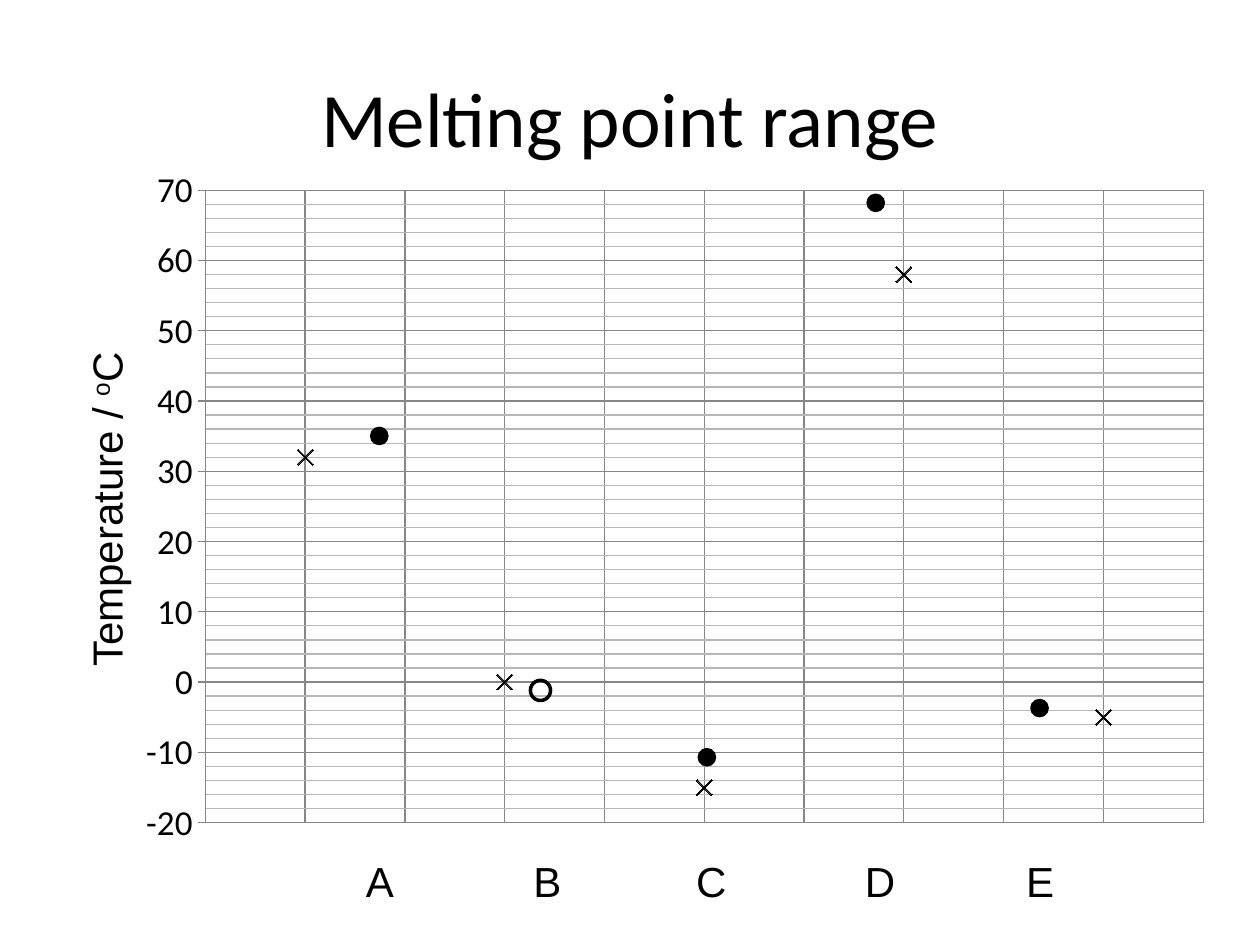
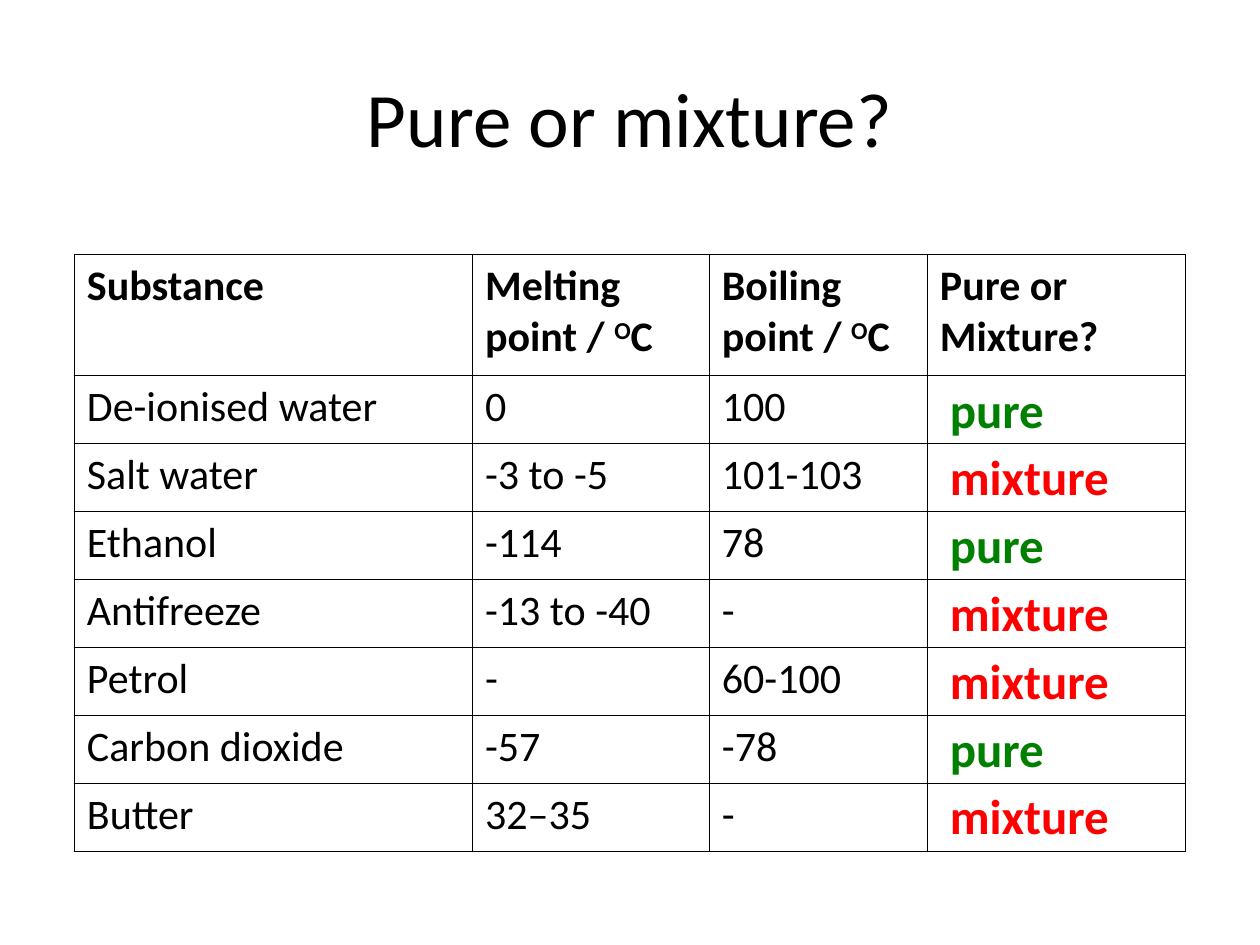
from lxml import etree
from pptx import Presentation
from pptx.chart.data import XyChartData
from pptx.dml.color import RGBColor
from pptx.enum.chart import XL_CHART_TYPE, XL_MARKER_STYLE, XL_TICK_LABEL_POSITION, XL_TICK_MARK
from pptx.enum.shapes import MSO_SHAPE
from pptx.enum.text import MSO_ANCHOR, PP_ALIGN
from pptx.oxml import parse_xml
from pptx.oxml.ns import nsdecls, qn
from pptx.util import Inches, Pt

SCATTER = XL_CHART_TYPE.XY_SCATTER
CROSS = XL_MARKER_STYLE.X
LABELS_LOW = XL_TICK_LABEL_POSITION.LOW
TICK_OUT, TICK_NONE = XL_TICK_MARK.OUTSIDE, XL_TICK_MARK.NONE
OVAL = MSO_SHAPE.OVAL
TOP, MIDDLE = MSO_ANCHOR.TOP, MSO_ANCHOR.MIDDLE
LEFT, CENTER = PP_ALIGN.LEFT, PP_ALIGN.CENTER

WIDTH, HEIGHT = Inches(10), Inches(7.5)
COLUMNS, ROWS = 100, 75
COLORS = {"ink": "000000", "major": "868686", "minor": "B7B7B7",
          "pure": "008000", "mixture": "FF0000"}

MELTING_POINTS = [32, 0, -15, 58, -5]
SUBSTANCE_LABELS = {"A": 30.15, "B": 43.45, "C": 56.45, "D": 69.85, "E": 82.55}
RANGE_DOTS = [(30.1, 34.6), (56.1, 60.1), (69.5, 16.1), (82.5, 56.2)]
HOLLOW_DOT = (42.9, 54.8)

HEADINGS = ["Substance", "Melting point / ^O^C", "Boiling point / ^O^C", "Pure or Mixture?"]
SUBSTANCES = [
    ("De-ionised water", "0", "100", "pure"),
    ("Salt water", "-3 to -5", "101-103", "mixture"),
    ("Ethanol", "-114", "78", "pure"),
    ("Antifreeze", "-13 to -40", "-", "mixture"),
    ("Petrol", "-", "60-100", "mixture"),
    ("Carbon dioxide", "-57", "-78", "pure"),
    ("Butter", "32–35", "-", "mixture"),
]


def rgb(name):
    return RGBColor.from_string(COLORS[name])


def write(frame, text, size=24, font="Calibri", color="ink", bold=False, align=LEFT):
    """Text between carets is raised."""
    paragraph = frame.paragraphs[0]
    paragraph.alignment = align
    for index, part in enumerate(text.split("^")):
        run = paragraph.add_run()
        run.text = part
        run.font.size, run.font.name, run.font.bold = Pt(size), font, bold
        run.font.color.rgb = rgb(color)
        if index % 2:
            run.font._element.set("baseline", "30000")


class Deck:
    def __init__(self):
        self.presentation = Presentation()
        self.presentation.slide_width, self.presentation.slide_height = WIDTH, HEIGHT
        self.slide = None

    def x(self, columns):
        return round(WIDTH * columns / COLUMNS)

    def y(self, rows):
        return round(HEIGHT * rows / ROWS)

    def box(self, left, top, width, height):
        return self.x(left), self.y(top), self.x(width), self.y(height)

    def new_slide(self, title):
        self.slide = self.presentation.slides.add_slide(self.presentation.slide_layouts[6])
        self.text(title, (5, 3, 90, 12.5), wrap=True, anchor=MIDDLE, size=44, align=CENTER)

    def text(self, text, area, wrap=False, anchor=TOP, rotation=0, **style):
        label = self.slide.shapes.add_textbox(*self.box(*area))
        label.rotation = rotation
        label.text_frame.word_wrap = wrap
        label.text_frame.vertical_anchor = anchor
        write(label.text_frame, text, **style)

    def dot(self, center, diameter, filled=True):
        left, top = (place - diameter / 2 for place in center)
        dot = self.slide.shapes.add_shape(OVAL, *self.box(left, top, diameter, diameter))
        dot.shadow.inherit = False
        if filled:
            dot.fill.solid()
            dot.fill.fore_color.rgb = rgb("ink")
        else:
            dot.fill.background()
        dot.line.color.rgb = rgb("ink")
        dot.line.width = Pt(2)

    def scatter(self, values, area, plot):
        data = XyChartData()
        points = data.add_series("Series 1")
        for position, value in enumerate(values, 1):
            points.add_data_point(position, value)
        chart = self.slide.shapes.add_chart(SCATTER, *self.box(*area), data).chart
        chart.has_legend = chart.has_title = False
        chart.font.name, chart.font.size = "Calibri", Pt(20)
        chart.font.color.rgb = rgb("ink")
        chart.plots[0].vary_by_categories = False

        series = chart.plots[0].series[0]
        series.smooth = False
        series.format.line.fill.background()
        series.marker.style, series.marker.size = CROSS, 9
        series.marker.format.fill.solid()
        series.marker.format.fill.fore_color.rgb = rgb("ink")
        series.marker.format.line.color.rgb = rgb("ink")

        across, up = chart.category_axis, chart.value_axis
        across.minimum_scale, across.maximum_scale, across.major_unit = 0.5, 5.5, 0.5
        up.minimum_scale, up.maximum_scale = -20, 70
        up.major_unit, up.minor_unit = 10, 2
        across.visible = False
        up.tick_label_position = LABELS_LOW
        up.major_tick_mark, up.minor_tick_mark = TICK_OUT, TICK_NONE
        across.has_major_gridlines = up.has_major_gridlines = up.has_minor_gridlines = True
        for part in (across.major_gridlines, up.major_gridlines, up):
            part.format.line.color.rgb = rgb("major")
            part.format.line.width = Pt(0.75)
        up._element.find(qn("c:minorGridlines")).append(parse_xml(
            f'<c:spPr {nsdecls("c", "a")}><a:ln w="9525"><a:solidFill>'
            f'<a:srgbClr val="{COLORS["minor"]}"/></a:solidFill></a:ln></c:spPr>'))
        self.place_plot(chart, area, plot)

    def place_plot(self, chart, area, plot):
        shares = {"x": (plot[0] - area[0]) / area[2], "y": (plot[1] - area[1]) / area[3],
                  "w": plot[2] / area[2], "h": plot[3] / area[3]}
        plot_area = chart._chartSpace.find(".//" + qn("c:plotArea"))
        for old in plot_area.findall(qn("c:layout")):
            plot_area.remove(old)
        layout = etree.Element(qn("c:layout"))
        manual = etree.SubElement(layout, qn("c:manualLayout"))
        settings = {"layoutTarget": "inner", "xMode": "edge", "yMode": "edge", **shares}
        for tag, value in settings.items():
            etree.SubElement(manual, qn("c:" + tag)).set("val", str(value))
        plot_area.insert(0, layout)

    def table(self, rows, area, widths, heights):
        table = self.slide.shapes.add_table(len(rows), len(widths), *self.box(*area)).table
        table.horz_banding = False
        for column, width in zip(table.columns, widths):
            column.width = self.x(width)
        for index, (row, height) in enumerate(zip(table.rows, heights)):
            row.height = self.y(height)
            for cell in row.cells:
                cell.fill.background()
                self.border(cell)
            for cell, text in zip(row.cells, rows[index]):
                write(cell.text_frame, text, bold=index == 0)

    def border(self, cell):
        properties = cell._tc.get_or_add_tcPr()
        for position, side in enumerate("LRTB"):
            properties.insert(position, parse_xml(
                f'<a:ln{side} {nsdecls("a")} w="12700"><a:solidFill>'
                f'<a:srgbClr val="{COLORS["ink"]}"/></a:solidFill></a:ln{side}>'))


def melting_point_slide(deck):
    deck.new_slide("Melting point range")
    deck.scatter(MELTING_POINTS, area=(9.8, 12.3, 87.4, 55.9), plot=(16.3, 15.1, 79.2, 50.2))
    deck.text("Temperature / ^o^C", (-5.3, 37.7, 27.4, 5), rotation=270, font="Arial")
    for letter, center in SUBSTANCE_LABELS.items():
        deck.text(letter, (center - 2.2, 67.4, 4.4, 5), font="Arial", align=CENTER)
    for center in RANGE_DOTS:
        deck.dot(center, 1.2)
    deck.dot(HOLLOW_DOT, 1.6, filled=False)


def mixture_slide(deck):
    deck.new_slide("Pure or mixture?")
    rows = [HEADINGS] + [substance[:3] for substance in SUBSTANCES]
    deck.table(rows, (5.9, 20.2, 88.2, 47.4), widths=[31.6, 18.8, 17.3, 20.5],
               heights=[9.6] + [5.4] * len(SUBSTANCES))
    for index, (*_, verdict) in enumerate(SUBSTANCES):
        width = 9.6 if verdict == "pure" else 14.8
        deck.text(verdict, (74.4, 29.6 + 5.38 * index, width, 5.7),
                  size=28, color=verdict, bold=True)


def main():
    deck = Deck()
    melting_point_slide(deck)
    mixture_slide(deck)
    deck.presentation.save("out.pptx")


if __name__ == "__main__":
    main()
